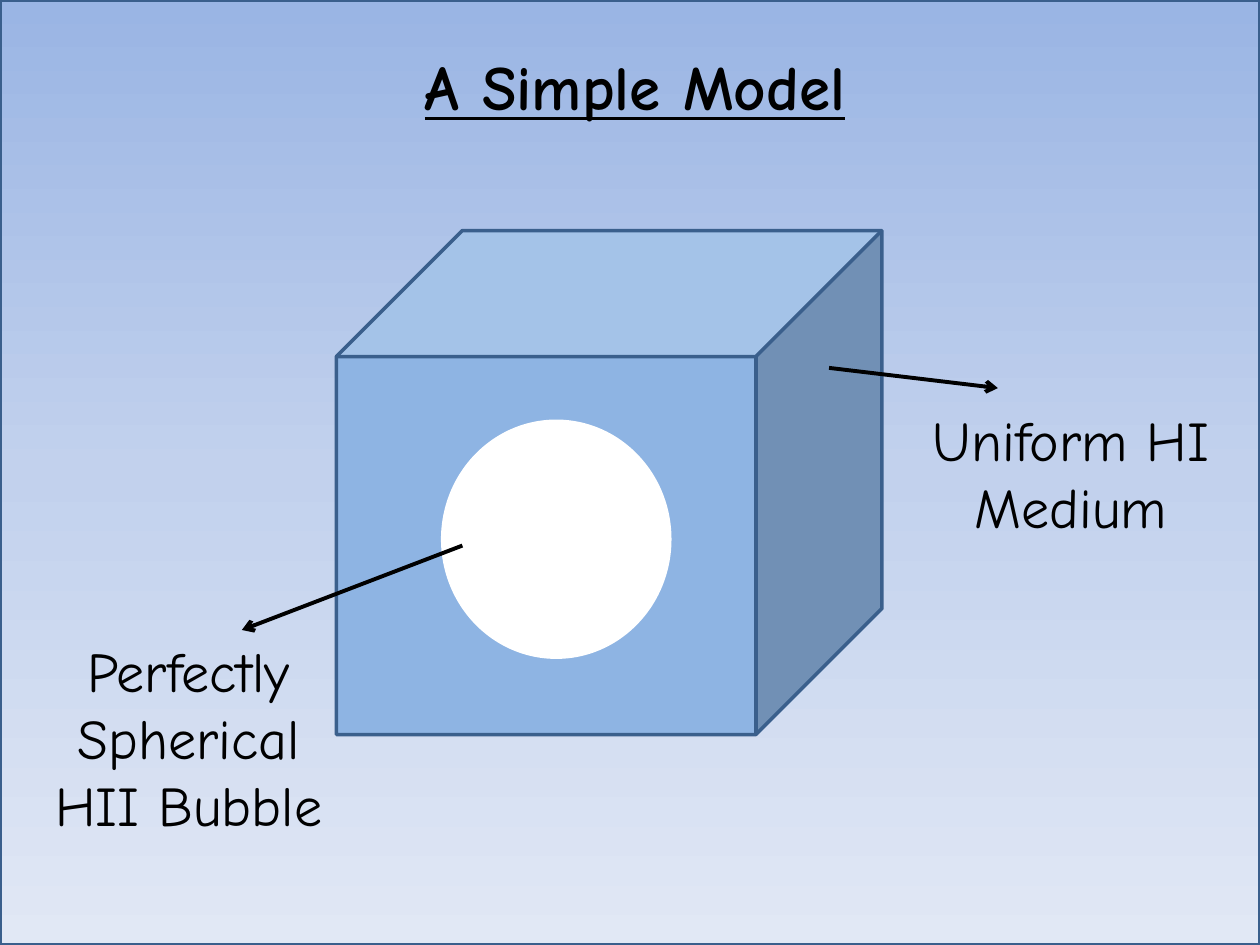
from copy import deepcopy
from pptx import Presentation
from pptx.dml.color import RGBColor
from pptx.enum.shapes import MSO_CONNECTOR, MSO_SHAPE
from pptx.enum.text import MSO_AUTO_SIZE, PP_ALIGN
from pptx.oxml.ns import qn
from pptx.oxml.xmlchemy import OxmlElement
from pptx.util import Inches, Pt

RECT, CUBE, OVAL = MSO_SHAPE.RECTANGLE, MSO_SHAPE.CUBE, MSO_SHAPE.OVAL
LINE = MSO_CONNECTOR.STRAIGHT
CENTER = PP_ALIGN.CENTER
GROW = MSO_AUTO_SIZE.SHAPE_TO_FIT_TEXT
FONT = "Comic Neue"
BLACK = RGBColor(0x00, 0x00, 0x00)
WHITE = RGBColor(0xFF, 0xFF, 0xFF)
BLUE = RGBColor(0x8E, 0xB4, 0xE3)
EDGE = RGBColor(0x3A, 0x5F, 0x8C)
SKY = [
    (0, RGBColor(0x9A, 0xB5, 0xE4)),
    (0.5, RGBColor(0xC2, 0xD1, 0xED)),
    (1, RGBColor(0xE1, 0xE8, 0xF5)),
]

deck = Presentation()
deck.slide_width, deck.slide_height = Inches(10), Inches(7.5)
slide = deck.slides.add_slide(deck.slide_layouts[6])


def add_solid(kind, left, top, width, height, color, edge):
    shape = slide.shapes.add_shape(kind, Inches(left), Inches(top), Inches(width), Inches(height))
    shape.shadow.inherit = False
    shape.fill.solid()
    shape.fill.fore_color.rgb = color
    if edge:
        shape.line.color.rgb = edge
        shape.line.width = Pt(2)
    else:
        shape.line.fill.background()
    return shape


def add_label(left, top, width, height, lines, size, strong):
    box = slide.shapes.add_textbox(Inches(left), Inches(top), Inches(width), Inches(height))
    frame = box.text_frame
    frame.word_wrap = True
    frame.auto_size = GROW
    for i, line in enumerate(lines):
        para = frame.add_paragraph() if i else frame.paragraphs[0]
        para.alignment = CENTER
        run = para.add_run()
        run.text = line
        run.font.name = FONT
        run.font.size = Pt(size)
        run.font.color.rgb = BLACK
        run.font.bold = strong
        run.font.underline = strong


sky = add_solid(RECT, 0, 0, 10, 7.5, WHITE, EDGE)
sky.fill.gradient()
sky.fill.gradient_angle = 270
stops = sky._element.spPr.find(qn("a:gradFill")).find(qn("a:gsLst"))
stops.insert(1, deepcopy(stops[0]))
for stop, (place, color) in zip(sky.fill.gradient_stops, SKY):
    stop.position = place
    stop.color.rgb = color

add_solid(CUBE, 2.67, 1.83, 4.33, 4, BLUE, EDGE)
add_solid(OVAL, 3.5, 3.33, 1.83, 1.9, WHITE, None)

add_label(2.08, 0.33, 5.92, 0.71, ["A Simple Model"], 36, True)

for ends in [(6.58, 2.92, 7.92, 3.08), (3.67, 4.33, 1.92, 5)]:
    arrow = slide.shapes.add_connector(LINE, *[Inches(end) for end in ends])
    arrow.line.color.rgb = BLACK
    arrow.line.width = Pt(2.25)
    tip = OxmlElement("a:tailEnd")
    tip.set("type", "arrow")
    arrow.line._get_or_add_ln().append(tip)
    arrow._element.spPr.append(OxmlElement("a:effectLst"))

add_label(7.25, 3.17, 2.5, 1.18, ["Uniform HI", "Medium"], 32, False)
add_label(0.25, 5, 2.5, 1.72, ["Perfectly Spherical HII Bubble"], 32, False)

deck.save("out.pptx")
